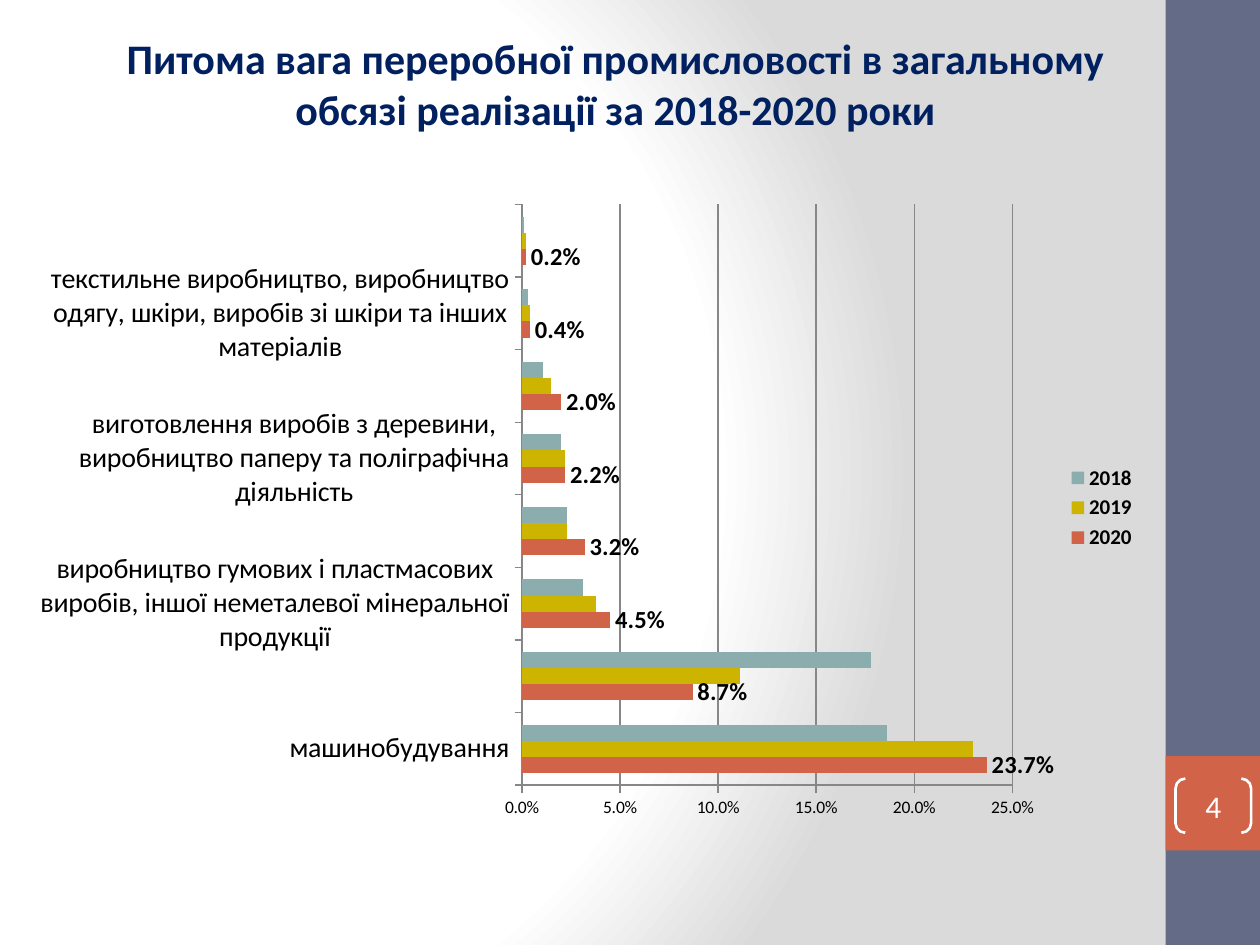
from dataclasses import dataclass

from lxml.etree import SubElement
from pptx import Presentation
from pptx.chart.data import CategoryChartData
from pptx.dml.color import RGBColor
from pptx.enum.chart import XL_CHART_TYPE as ChartType
from pptx.enum.chart import XL_LABEL_POSITION as LabelPosition
from pptx.enum.chart import XL_LEGEND_POSITION as LegendPosition
from pptx.enum.chart import XL_TICK_MARK as TickMark
from pptx.enum.shapes import MSO_SHAPE as Preset
from pptx.enum.text import MSO_ANCHOR as Anchor
from pptx.enum.text import PP_ALIGN as Align
from pptx.oxml import parse_xml
from pptx.oxml.ns import nsdecls, qn
from pptx.util import Inches, Pt

CELL = 0.25  # inches; the slide is a grid of 40 columns by 30 rows
COLUMNS, ROWS = 40, 30


@dataclass(frozen=True)
class Theme:
    font: str = "Calibri"
    navy: str = "002060"
    slate: str = "646B86"
    coral: str = "D16349"
    white: str = "FFFFFF"
    shade: str = "DADADA"
    black: str = "000000"
    rule: str = "878787"
    title_size: float = 24
    number_size: float = 18
    category_size: float = 16
    value_size: float = 14
    legend_size: float = 12
    axis_size: float = 10


@dataclass(frozen=True)
class Area:
    """A place on the grid, in columns and rows."""
    column: float
    row: float
    columns: float
    rows: float

    def emu(self):
        return [Inches(n * CELL) for n in (self.column, self.row, self.columns, self.rows)]


@dataclass(frozen=True)
class Year:
    name: str
    color: str
    shares: tuple


THEME = Theme()

BRANCHES = (
    "машинобудування",
    "виробництво харчових продуктів, напоїв і тютюнових виробів",
    "виробництво гумових і пластмасових виробів, іншої неметалевої мінеральної продукції",
    "виробництво меблів, іншої продукції, ремонт і монтаж машин і устатковання",
    "виготовлення виробів з деревини, виробництво паперу та поліграфічна діяльність",
    "металургійне виробництво, виробництво готових металевих виробів, крім машин і устатковання",
    "текстильне виробництво, виробництво одягу, шкіри, виробів зі шкіри та інших матеріалів",
    "виробництво хімічних речовин і хімічної продукції",
)
YEARS = (
    Year("2020", THEME.coral, (0.237, 0.087, 0.045, 0.032, 0.022, 0.02, 0.004, 0.002)),
    Year("2019", "CCB400", (0.23, 0.111, 0.038, 0.023, 0.022, 0.015, 0.004, 0.002)),
    Year("2018", "8CADAE", (0.186, 0.178, 0.031, 0.023, 0.02, 0.011, 0.003, 0.001)),
)
TITLE = ("Питома вага переробної промисловості в загальному",
         "обсязі реалізації за 2018-2020 роки")


def style_font(font, size: float, color: str, bold: bool = False) -> None:
    font.name, font.size, font.bold = THEME.font, Pt(size), bold
    font.color.rgb = RGBColor.from_string(color)


def paint_background(slide) -> None:
    """Radial gradient, white on the left and grey towards the right."""
    stops = "".join(
        f'<a:gs pos="{percent * 1000}"><a:srgbClr val="{color}"/></a:gs>'
        for percent, color in ((0, THEME.white), (75, THEME.white), (100, THEME.shade)))
    slide.element.cSld.insert(0, parse_xml(
        f'<p:bg {nsdecls("p", "a")}><p:bgPr><a:gradFill rotWithShape="1">'
        f'<a:gsLst>{stops}</a:gsLst><a:path path="circle">'
        '<a:fillToRect l="20000" t="50000" r="100000" b="50000"/></a:path>'
        '</a:gradFill><a:effectLst/></p:bgPr></p:bg>'))


def add_block(slide, area: Area, color: str) -> None:
    block = slide.shapes.add_shape(Preset.RECTANGLE, *area.emu())
    block.shadow.inherit = False
    block.fill.solid()
    block.fill.fore_color.rgb = RGBColor.from_string(color)
    block.line.fill.background()


def add_page_number(slide, area: Area, number: str) -> None:
    brackets = slide.shapes.add_shape(Preset.DOUBLE_BRACKET, *area.emu())
    brackets.adjustments[0] = 0.18
    brackets.shadow.inherit = False
    brackets.fill.background()
    brackets.line.color.rgb = RGBColor.from_string(THEME.white)
    brackets.line.width = Pt(1.5)
    frame = brackets.text_frame
    frame.margin_left = frame.margin_right = frame.margin_top = frame.margin_bottom = 0
    frame.vertical_anchor = Anchor.MIDDLE
    frame.text = number
    frame.paragraphs[0].alignment = Align.CENTER
    style_font(frame.paragraphs[0].runs[0].font, THEME.number_size, THEME.white)


def add_title(slide, area: Area, lines: tuple) -> None:
    frame = slide.shapes.add_textbox(*area.emu()).text_frame
    frame.word_wrap = False
    frame.text = "\n".join(lines)
    for line in frame.paragraphs:
        line.alignment = Align.CENTER
        style_font(line.runs[0].font, THEME.title_size, THEME.navy, bold=True)


def place_plot(chart, **shares: float) -> None:
    """Fix the inner plot area, in shares of the chart's size."""
    plot_area = chart._chartSpace.chart.plotArea
    layout = plot_area.find(qn("c:layout"))
    if layout is None:
        layout = plot_area.makeelement(qn("c:layout"))
        plot_area.insert(0, layout)
    manual = SubElement(layout, qn("c:manualLayout"))
    settings = {"layoutTarget": "inner", "xMode": "edge", "yMode": "edge", **shares}
    for tag, value in settings.items():
        SubElement(manual, qn(f"c:{tag}")).set("val", str(value))


def style_axis(axis, size: float) -> None:
    axis.major_tick_mark = TickMark.OUTSIDE
    axis.minor_tick_mark = TickMark.NONE
    style_font(axis.tick_labels.font, size, THEME.black)
    axis.format.line.color.rgb = RGBColor.from_string(THEME.rule)


def add_share_chart(slide, area: Area, branches: tuple, years: tuple) -> None:
    data = CategoryChartData(number_format="0.0%")
    data.categories = branches
    for year in years:
        data.add_series(year.name, year.shares)
    chart = slide.shapes.add_chart(ChartType.BAR_CLUSTERED, *area.emu(), data).chart
    chart.has_title = False
    style_font(chart.font, THEME.axis_size, THEME.black)
    place_plot(chart, x=0.45, y=0.03, w=0.43, h=0.9)

    style_axis(chart.category_axis, THEME.category_size)
    style_axis(chart.value_axis, THEME.axis_size)
    chart.value_axis.has_major_gridlines = True
    chart.value_axis.major_gridlines.format.line.color.rgb = RGBColor.from_string(THEME.rule)
    chart.value_axis.tick_labels.number_format = "0.0%"
    chart.value_axis.tick_labels.number_format_is_linked = False

    chart.has_legend = True
    chart.legend.position = LegendPosition.RIGHT
    chart.legend.include_in_layout = False
    style_font(chart.legend.font, THEME.legend_size, THEME.black, bold=True)

    bars = chart.plots[0]
    bars.gap_width, bars.overlap, bars.vary_by_categories = 150, 0, False
    for series, year in zip(bars.series, years):
        series.format.fill.solid()
        series.format.fill.fore_color.rgb = RGBColor.from_string(year.color)
    latest = bars.series[0].data_labels
    latest.show_value = True
    latest.position = LabelPosition.OUTSIDE_END
    latest.number_format, latest.number_format_is_linked = "0.0%", False
    style_font(latest.font, THEME.value_size, THEME.black, bold=True)


def main() -> None:
    deck = Presentation()
    deck.slide_width, deck.slide_height = Inches(COLUMNS * CELL), Inches(ROWS * CELL)
    slide = deck.slides.add_slide(deck.slide_layouts[6])
    paint_background(slide)
    add_block(slide, Area(37, 0, 3, ROWS), THEME.slate)
    add_block(slide, Area(37, 24, 3, 3), THEME.coral)
    add_page_number(slide, Area(37.32, 24.72, 2.4, 1.72), "4")
    add_share_chart(slide, Area(0.28, 5.88, 36.2, 20.48), BRANCHES, YEARS)
    add_title(slide, Area(3.32, 0.84, 32.44, 3.64), TITLE)
    deck.save("out.pptx")


if __name__ == "__main__":
    main()
